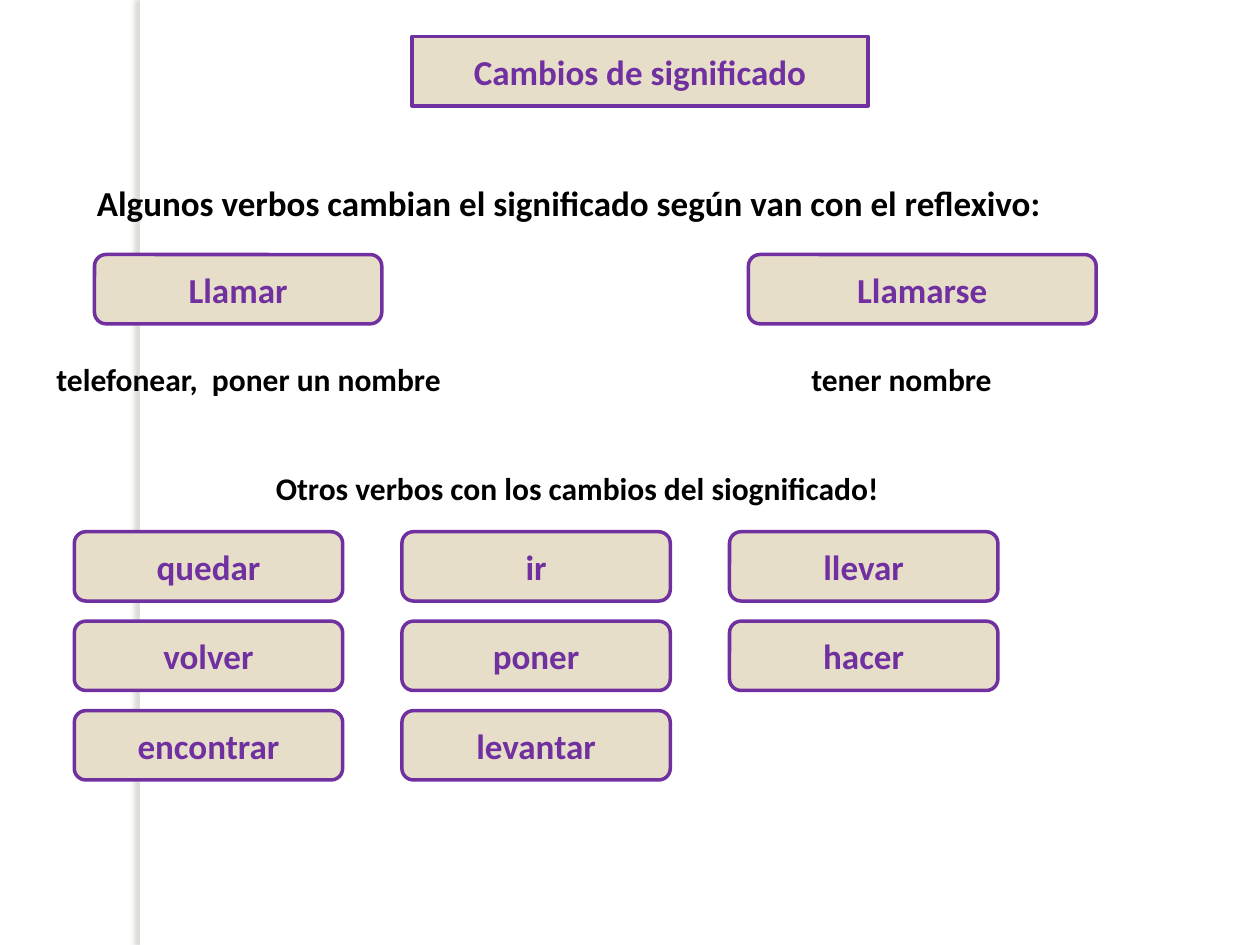
from lxml import etree
from pptx import Presentation
from pptx.dml.color import RGBColor
from pptx.enum import shapes, text
from pptx.oxml import parse_xml
from pptx.oxml.ns import nsdecls, qn
from pptx.util import Inches, Pt

FONT = "Calibri"
PURPLE, SAND, BLACK, WHITE = "7030A0", "E7DEC9", "000000", "FFFFFF"
BOX_HEIGHT = 0.55


def color(value):
    return RGBColor.from_string(value)


def write(shape, content, size=20, fill=BLACK, align=text.PP_ALIGN.LEFT,
          anchor=text.MSO_ANCHOR.TOP, wrap=True, fit=text.MSO_AUTO_SIZE.NONE):
    frame = shape.text_frame
    frame.word_wrap = wrap
    frame.auto_size = fit
    frame.vertical_anchor = anchor
    paragraph = frame.paragraphs[0]
    paragraph.alignment = align
    run = paragraph.add_run()
    run.text = content
    run.font.name = FONT
    run.font.size = Pt(size)
    run.font.bold = True
    run.font.color.rgb = color(fill)


def style_card(shape, content):
    """Sand fill, purple outline and centred purple label."""
    shape.fill.solid()
    shape.fill.fore_color.rgb = color(SAND)
    shape.line.color.rgb = color(PURPLE)
    shape.line.width = Pt(2)
    shape.shadow.inherit = False
    write(shape, content, fill=PURPLE, align=text.PP_ALIGN.CENTER,
          anchor=text.MSO_ANCHOR.MIDDLE)


def add_card(slide, content, left, top, width):
    shape = slide.shapes.add_shape(
        shapes.MSO_SHAPE.ROUNDED_RECTANGLE,
        Inches(left), Inches(top), Inches(width), Inches(BOX_HEIGHT))
    style_card(shape, content)


def add_label(slide, content, left, top, width, height=0.4, size=18):
    box = slide.shapes.add_textbox(
        Inches(left), Inches(top), Inches(width), Inches(height))
    write(box, content, size=size, wrap=False,
          fit=text.MSO_AUTO_SIZE.SHAPE_TO_FIT_TEXT)


def add_side_band(slide, left, top, width, height):
    band = slide.shapes.add_shape(
        shapes.MSO_SHAPE.RECTANGLE,
        Inches(left), Inches(top), Inches(width), Inches(height))
    band.fill.solid()
    band.fill.fore_color.rgb = color(WHITE)
    band.line.fill.background()
    band.shadow.inherit = False
    effects = band._element.spPr.find(qn("a:effectLst"))
    shadow = etree.SubElement(effects, qn("a:outerShdw"), blurRad=str(Pt(3)),
                              dist=str(Pt(3)), dir="10800000", rotWithShape="0")
    tint = etree.SubElement(shadow, qn("a:srgbClr"), val="736F63")
    etree.SubElement(tint, qn("a:alpha"), val="25000")


def set_title(slide, content, left, top, width):
    title = slide.shapes.title
    title.left, title.top = Inches(left), Inches(top)
    title.width, title.height = Inches(width), Inches(BOX_HEIGHT)
    title._element.spPr.append(parse_xml(
        f'<a:prstGeom {nsdecls("a")} prst="roundRect"><a:avLst/></a:prstGeom>'))
    style_card(title, content)


def add_comparison(slide, top):
    """Two verbs, each with its meaning below."""
    add_card(slide, "Llamar", 0.75, top, 2.28)
    add_card(slide, "Llamarse", 5.94, top, 2.76)
    add_label(slide, "telefonear,  poner un nombre", 0.35, top + 0.79, 3.63)
    add_label(slide, "tener nombre", 6.34, top + 0.79, 1.85)


def add_verb_grid(slide, rows, left, top, width, column_step, row_step):
    for row, verbs in enumerate(rows):
        for column, verb in enumerate(verbs):
            add_card(slide, verb, left + column * column_step,
                     top + row * row_step, width)


def main():
    presentation = Presentation()
    presentation.slide_width = Inches(10)
    presentation.slide_height = Inches(7.5)
    slide = presentation.slides.add_slide(presentation.slide_layouts[5])
    slide.background.fill.solid()
    slide.background.fill.fore_color.rgb = color(WHITE)

    # Side band and title
    add_side_band(slide, 1.11, 0, 0.08, 7.5)
    set_title(slide, "Cambios de significado", 3.27, 0.29, 3.62)

    # Verbs that change meaning
    add_label(slide, "Algunos verbos cambian el significado según van con el reflexivo:",
              0.67, 1.39, 8.55, height=0.44, size=20)
    add_comparison(slide, 2.02)

    # Further verbs
    add_label(slide, "Otros verbos con los cambios del siognificado!", 2.09, 3.67, 5.61)
    rows = [("quedar", "ir", "llevar"),
            ("volver", "poner", "hacer"),
            ("encontrar", "levantar")]
    add_verb_grid(slide, rows, 0.59, 4.22, 2.13, column_step=2.6, row_step=0.71)

    presentation.save("out.pptx")


if __name__ == "__main__":
    main()
